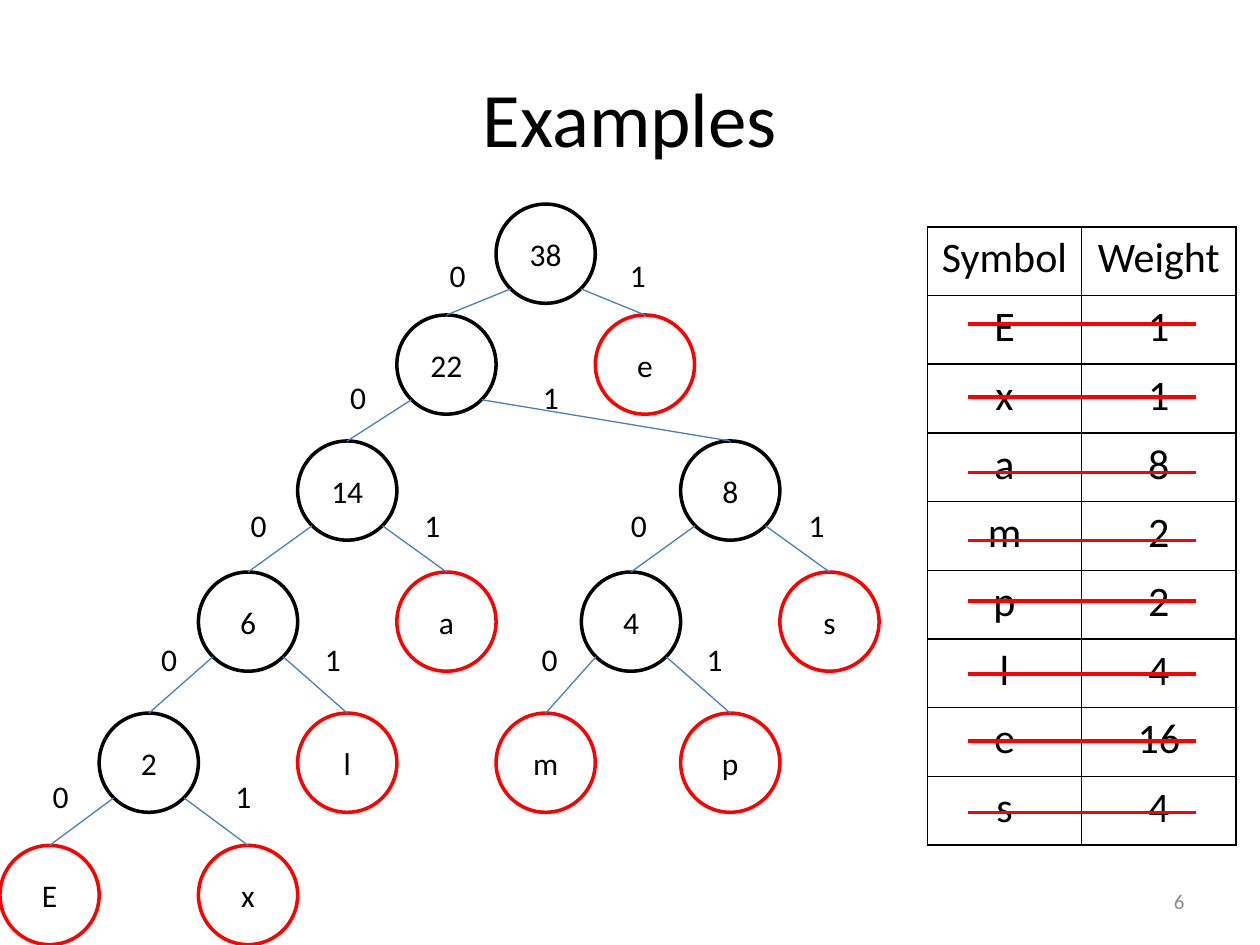
from lxml.etree import SubElement
from pptx import Presentation
from pptx.dml.color import RGBColor
from pptx.enum.shapes import MSO_CONNECTOR as Connector, MSO_SHAPE as Shape
from pptx.enum.text import MSO_ANCHOR as Anchor, MSO_AUTO_SIZE as AutoSize, PP_ALIGN as Align
from pptx.oxml import parse_xml
from pptx.oxml.ns import nsdecls, qn
from pptx.util import Inches, Pt

BLACK = RGBColor(0x00, 0x00, 0x00)
RED = RGBColor(0xFF, 0x00, 0x00)
BLUE = RGBColor(0x4B, 0x7E, 0xBC)
GREY = RGBColor(0x8C, 0x8C, 0x8C)
FONT = "Calibri"

# Tree grid: a column is as wide as a node
NODE = 0.7875
LEVELS = [1.62, 2.5, 3.5, 4.54, 5.66, 6.71]
BIT_TOPS = [None, 1.98, 2.95, 3.97, 5.03, 6.12]
DIAGONAL = 0.354 * NODE  # centre to the circle's lower left or right point, per axis

# name: (text, column, level, parent, bit on the edge, left of the bit)
NODES = {
    "root": ("38", 5, 0, None, None, None),
    "22": ("22", 4, 1, "root", "0", 3.47),
    "e": ("e", 6, 1, "root", "1", 4.9),
    "14": ("14", 3, 2, "22", "0", 2.68),
    "8": ("8", 6.86, 2, "22", "1", 4.21),
    "6": ("6", 2, 3, "14", "0", 1.89),
    "a": ("a", 4, 3, "14", "1", 3.27),
    "4": ("4", 5.86, 3, "8", "0", 4.91),
    "s": ("s", 7.86, 3, "8", "1", 6.32),
    "2": ("2", 1, 4, "6", "0", 1.18),
    "l": ("l", 3, 4, "6", "1", 2.48),
    "m": ("m", 5, 4, "4", "0", 4.2),
    "p": ("p", 6.86, 4, "4", "1", 5.51),
    "E": ("E", 0, 5, "2", "0", 0.32),
    "x": ("x", 2, 5, "2", "1", 1.77),
}

WEIGHTS = [("Symbol", "Weight"), ("E", "1"), ("x", "1"), ("a", "8"), ("m", "2"),
           ("p", "2"), ("l", "4"), ("e", "16"), ("s", "4")]
STRIKES = [2.57, 3.15, 3.75, 4.29, 4.77, 5.35, 5.88, 6.45]


def write(frame, text, size, align=Align.CENTER, color=BLACK):
    para = frame.paragraphs[0]
    para.alignment = align
    span = para.add_run()
    span.text = text
    span.font.name = FONT
    span.font.size = Pt(size)
    span.font.color.rgb = color


def draw_line(x1, y1, x2, y2, color, width):
    line = page.shapes.add_connector(
        Connector.STRAIGHT, Inches(x1), Inches(y1), Inches(x2), Inches(y2))
    line.line.color.rgb = color
    line.line.width = Pt(width)
    SubElement(line._element.spPr, qn("a:effectLst"))
    return line


deck = Presentation()
deck.slide_width, deck.slide_height = Inches(10), Inches(7.5)
page = deck.slides.add_slide(deck.slide_layouts[5])

title = page.shapes.title
title.left, title.top = Inches(0.5), Inches(0.3)
title.width, title.height = Inches(9), Inches(1.25)
title.text_frame.vertical_anchor = Anchor.MIDDLE
write(title.text_frame, "Examples", 44)

# Table of weights
table = page.shapes.add_table(
    len(WEIGHTS), 2, Inches(7.36), Inches(1.8), Inches(2.45), Inches(4.91)).table
table.first_row = table.horz_banding = False
for row, values in enumerate(WEIGHTS):
    for column, value in enumerate(values):
        cell = table.cell(row, column)
        write(cell.text_frame, value, 24)
        properties = cell._tc.get_or_add_tcPr()
        for side in ("lnL", "lnR", "lnT", "lnB"):
            properties.append(parse_xml(
                f'<a:{side} {nsdecls("a")} w="12700"><a:solidFill>'
                f'<a:srgbClr val="{BLACK}"/></a:solidFill></a:{side}>'))
        cell.fill.background()

number = page.shapes.add_textbox(Inches(7.17), Inches(6.95), Inches(2.33), Inches(0.4))
number.text_frame.word_wrap = True
number.text_frame.vertical_anchor = Anchor.MIDDLE
write(number.text_frame, "6", 12, Align.RIGHT, GREY)

# Tree: leaves are red, inner nodes black
parents = {node[3] for node in NODES.values()}
circles = {}
for name, (text, column, level, *_) in NODES.items():
    circle = page.shapes.add_shape(
        Shape.OVAL, Inches(column * NODE), Inches(LEVELS[level]), Inches(NODE), Inches(NODE))
    circle.shadow.inherit = False
    circle.fill.background()
    circle.line.color.rgb = BLACK if name in parents else RED
    circle.line.width = Pt(2)
    circle.text_frame.vertical_anchor = Anchor.MIDDLE
    write(circle.text_frame, text, 18)
    circles[name] = circle

for name, (_, column, level, parent, bit, bit_left) in NODES.items():
    if parent is None:
        continue
    _, parent_column, parent_level, *_ = NODES[parent]
    side = -1 if bit == "0" else 1
    edge = draw_line((parent_column + 0.5) * NODE + side * DIAGONAL,
                     LEVELS[parent_level] + NODE / 2 + DIAGONAL,
                     (column + 0.5) * NODE, LEVELS[level], BLUE, 0.75)
    edge.end_connect(circles[name], 0)

    box = page.shapes.add_textbox(
        Inches(bit_left), Inches(BIT_TOPS[level]), Inches(0.33), Inches(0.4))
    box.text_frame.word_wrap = False
    box.text_frame.auto_size = AutoSize.SHAPE_TO_FIT_TEXT
    write(box.text_frame, bit, 18, Align.LEFT)

for height in STRIKES:
    draw_line(7.68, height, 9.49, height, RED, 2)

deck.save("out.pptx")
